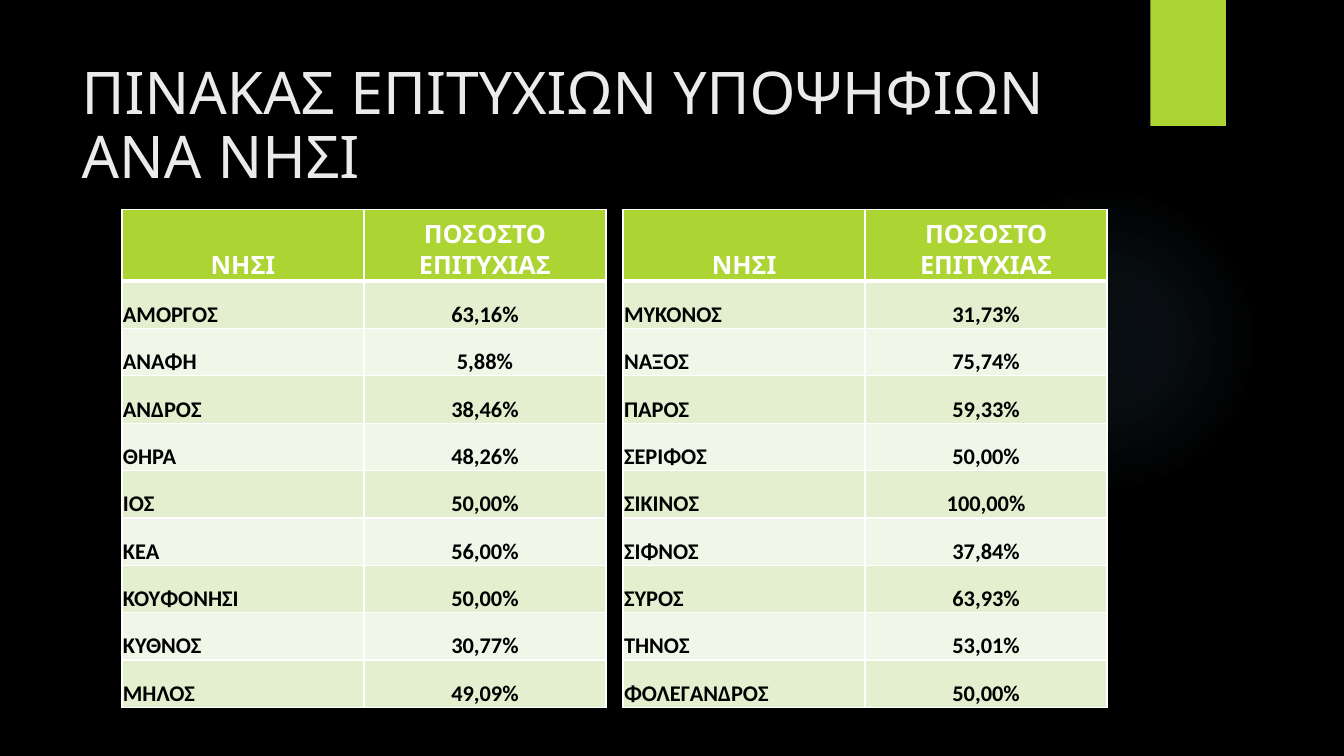
from lxml import etree
from pptx import Presentation
from pptx import util as u
from pptx.dml.color import RGBColor
from pptx.enum import shapes, text
from pptx.oxml import parse_xml
from pptx.oxml.ns import nsdecls, qn

COLORS = {
    "background": "000000", "accent": "ACD433", "title": "EBEBEB",
    "header": "FFFFFF", "body": "000000", "border": "FFFFFF",
    "odd": "E3EFCE", "even": "F1F7E8", "glow": "7AC4F0",
}
HEADERS = ("ΝΗΣΙ", "ΠΟΣΟΣΤΟ ΕΠΙΤΥΧΙΑΣ")
ISLANDS = [
    ("ΑΜΟΡΓΟΣ", "63,16%"), ("ΑΝΑΦΗ", "5,88%"), ("ΑΝΔΡΟΣ", "38,46%"),
    ("ΘΗΡΑ", "48,26%"), ("ΙΟΣ", "50,00%"), ("ΚΕΑ", "56,00%"),
    ("ΚΟΥΦΟΝΗΣΙ", "50,00%"), ("ΚΥΘΝΟΣ", "30,77%"), ("ΜΗΛΟΣ", "49,09%"),
    ("ΜΥΚΟΝΟΣ", "31,73%"), ("ΝΑΞΟΣ", "75,74%"), ("ΠΑΡΟΣ", "59,33%"),
    ("ΣΕΡΙΦΟΣ", "50,00%"), ("ΣΙΚΙΝΟΣ", "100,00%"), ("ΣΙΦΝΟΣ", "37,84%"),
    ("ΣΥΡΟΣ", "63,93%"), ("ΤΗΝΟΣ", "53,01%"), ("ΦΟΛΕΓΑΝΔΡΟΣ", "50,00%"),
]
ROWS_PER_TABLE = 9
HEADER_HEIGHT, ROW_HEIGHT, COLUMN_WIDTH = 0.71, 0.47, 2.4
FORMATS = {
    "title": {"name": "Quicksand", "size": u.Pt(42), "bold": False},
    "header": {"name": "Quicksand", "size": u.Pt(18), "bold": True},
    "body": {"name": "Calibri", "size": u.Pt(16), "bold": True},
}


def format_font(font, role):
    for attribute, value in FORMATS[role].items():
        setattr(font, attribute, value)
    font.color.rgb = RGBColor.from_string(COLORS[role])


def add_borders(cell, bottom_width):
    properties = cell._tc.get_or_add_tcPr()
    for side, width in (("L", 1), ("R", 1), ("T", 1), ("B", bottom_width)):
        line = etree.SubElement(properties, qn(f"a:ln{side}"), w=str(u.Pt(width)))
        fill = etree.SubElement(line, qn("a:solidFill"))
        etree.SubElement(fill, qn("a:srgbClr"), val=COLORS["border"])


presentation = Presentation()
presentation.slide_width = u.Inches(13.33)
presentation.slide_height = u.Inches(7.5)
slide = presentation.slides.add_slide(presentation.slide_layouts[5])
slide.background.fill.solid()
slide.background.fill.fore_color.rgb = RGBColor.from_string(COLORS["background"])

# Soft glow and accent tab
glow = slide.shapes.add_shape(
    shapes.MSO_SHAPE.OVAL, u.Inches(9.41), u.Inches(1.83), u.Inches(3.08), u.Inches(3.08))
tab = slide.shapes.add_shape(
    shapes.MSO_SHAPE.RECTANGLE, u.Inches(11.41), 0, u.Inches(0.75), u.Inches(1.25))
for shape in (glow, tab):
    shape.shadow.inherit = False
    shape.line.fill.background()
    shape.fill.solid()
    shape.fill.fore_color.rgb = RGBColor.from_string(COLORS["accent"])

stops = "".join(
    f'<a:gs pos="{position * 1000}"><a:srgbClr val="{COLORS["glow"]}">'
    f'<a:alpha val="{alpha * 1000}"/></a:srgbClr></a:gs>'
    for position, alpha in ((0, 7), (36, 6), (69, 0), (100, 0)))
gradient = parse_xml(
    f'<a:gradFill {nsdecls("a")} rotWithShape="1"><a:gsLst>{stops}</a:gsLst>'
    '<a:path path="circle"><a:fillToRect l="50000" t="50000" r="50000" b="50000"/></a:path>'
    '</a:gradFill>')
glow_properties = glow._element.spPr
glow_properties.replace(glow_properties.find(qn("a:solidFill")), gradient)

# Title
title = slide.shapes.title
title.left, title.top = u.Inches(0.71), u.Inches(0.5)
title.width, title.height = u.Inches(10.29), u.Inches(1.53)
title.text_frame.text = "ΠΙΝΑΚΑΣ ΕΠΙΤΥΧΙΩΝ ΥΠΟΨΗΦΙΩΝ ΑΝΑ ΝΗΣΙ"
title.text_frame.word_wrap = True
title.text_frame.auto_size = text.MSO_AUTO_SIZE.NONE
title.text_frame.vertical_anchor = text.MSO_ANCHOR.MIDDLE
paragraph = title.text_frame.paragraphs[0]
paragraph.alignment = text.PP_ALIGN.LEFT
paragraph.line_spacing = 0.9
format_font(paragraph.runs[0].font, "title")

# Two tables side by side, nine islands each
for table_index, left in enumerate((1.21, 6.18)):
    start = table_index * ROWS_PER_TABLE
    rows = [HEADERS] + ISLANDS[start:start + ROWS_PER_TABLE]
    table = slide.shapes.add_table(
        len(rows), len(HEADERS), u.Inches(left), u.Inches(2.08),
        u.Inches(COLUMN_WIDTH * len(HEADERS)),
        u.Inches(HEADER_HEIGHT + ROW_HEIGHT * ROWS_PER_TABLE)).table
    for column in table.columns:
        column.width = u.Inches(COLUMN_WIDTH)

    for row_index, values in enumerate(rows):
        is_header = row_index == 0
        table.rows[row_index].height = u.Inches(HEADER_HEIGHT if is_header else ROW_HEIGHT)
        fill_name = "accent" if is_header else "odd" if row_index % 2 else "even"
        for column_index, value in enumerate(values):
            cell = table.cell(row_index, column_index)
            cell.text = value
            cell.vertical_anchor = text.MSO_ANCHOR.BOTTOM
            cell.margin_left = cell.margin_right = cell.margin_top = u.Inches(0.01)
            cell.margin_bottom = 0
            add_borders(cell, 3 if is_header else 1)
            cell.fill.solid()
            cell.fill.fore_color.rgb = RGBColor.from_string(COLORS[fill_name])
            paragraph = cell.text_frame.paragraphs[0]
            centred = is_header or column_index == 1
            paragraph.alignment = text.PP_ALIGN.CENTER if centred else text.PP_ALIGN.LEFT
            format_font(paragraph.runs[0].font, "header" if is_header else "body")

presentation.save("out.pptx")
